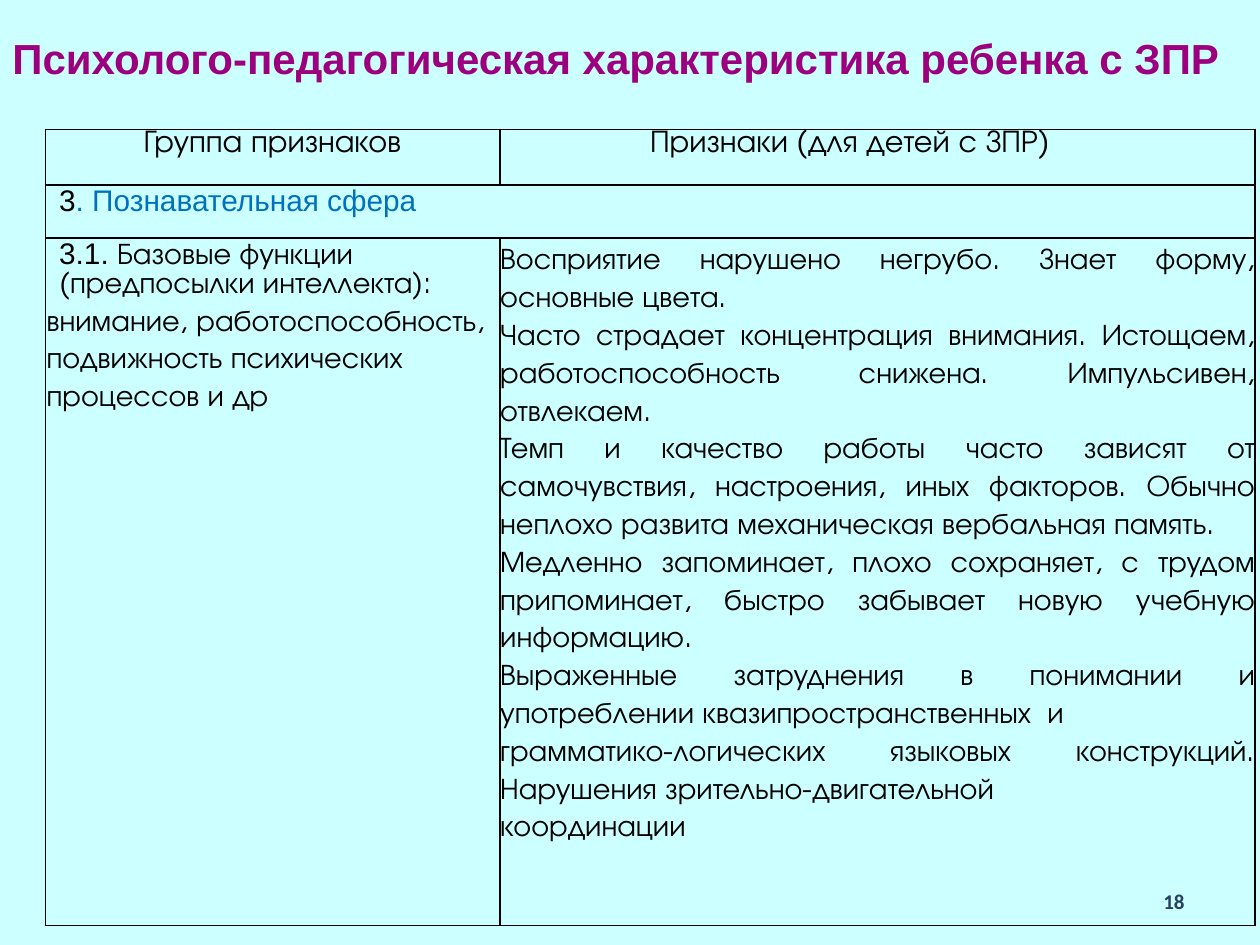
from lxml.etree import SubElement
from pptx import Presentation
from pptx.dml.color import RGBColor as RGB
from pptx.enum.text import MSO_ANCHOR as Anchor, PP_ALIGN as Align
from pptx.oxml.ns import qn
from pptx.util import Inches, Pt

AQUA = RGB(0xCC, 0xFF, 0xFF)
PURPLE = RGB(0x9C, 0x00, 0x7F)
NAVY = RGB(0x25, 0x40, 0x61)
BLUE = RGB(0x00, 0x70, 0xC0)
BLACK = RGB(0, 0, 0)
SANS, GEO, NUM = "Arial", "TeX Gyre Adventor", "Calibri"
W, H = Inches(10), Inches(7.5)


def add_run(p, text, font=GEO, size=17, color=BLACK, bold=False):
    r = p.add_run()
    r.text = text
    r.font.name, r.font.size, r.font.bold = font, Pt(size), bold
    r.font.color.rgb = color


def add_par(tf, text, align=Align.LEFT, indent=0, leading=None, **fmt):
    p = tf.paragraphs[0]
    if p.runs:
        p = tf.add_paragraph()
    p.alignment = align
    p._p.get_or_add_pPr().set("marL", str(Inches(indent)))
    if leading:
        p.line_spacing = Pt(leading)
    add_run(p, text, **fmt)
    return p


class Deck:
    def __init__(self):
        self.prs = Presentation()
        self.prs.slide_width, self.prs.slide_height = W, H

    def slide(self):
        self.s = self.prs.slides.add_slide(self.prs.slide_layouts[6])
        fill = self.s.background.fill
        fill.solid()
        fill.fore_color.rgb = AQUA

    def text(self, x, y, w, h, text, anchor=Anchor.TOP, wrap=True, **fmt):
        sp = self.s.shapes.add_textbox(int(x * W), int(y * H), int(w * W), int(h * H))
        tf = sp.text_frame
        tf.word_wrap, tf.vertical_anchor = wrap, anchor
        add_par(tf, text, **fmt)

    def table(self, x, y, cols, rows):
        frame = self.s.shapes.add_table(len(rows), len(cols), int(x * W), int(y * H),
                                        Inches(sum(cols)), Inches(sum(rows)))
        tbl = frame.table
        tbl.first_row = tbl.horz_banding = False
        for col, width in zip(tbl.columns, cols):
            col.width = Inches(width)
        for row, height in zip(tbl.rows, rows):
            row.height = Inches(height)
            for cell in row.cells:
                self.cell_style(cell)
        return tbl

    def cell_style(self, cell):
        cell.margin_left = cell.margin_right = cell.margin_top = cell.margin_bottom = 0
        cell.fill.background()
        tcPr = cell._tc.get_or_add_tcPr()
        for i, side in enumerate("LRTB"):
            ln = SubElement(tcPr, qn(f"a:ln{side}"), w=str(Pt(1)))
            fill = SubElement(ln, qn("a:solidFill"))
            SubElement(fill, qn("a:srgbClr"), val=str(BLACK))
            tcPr.insert(i, ln)


SIGNS = [
    "Восприятие нарушено негрубо. Знает форму, основные цвета.",
    "Часто страдает концентрация внимания. Истощаем, работоспособность снижена. "
    "Импульсивен, отвлекаем. ",
    "Темп и качество работы часто зависят от самочувствия, настроения, иных факторов. "
    "Обычно неплохо развита механическая вербальная память. ",
    "Медленно запоминает, плохо сохраняет, с трудом припоминает, быстро забывает "
    "новую учебную информацию. ",
    "Выраженные затруднения в понимании и употреблении квазипространственных  и ",
    "грамматико-логических языковых конструкций. Нарушения зрительно-двигательной",
    "координации",
]


def main():
    deck = Deck()
    deck.slide()
    deck.text(0.717, 0.927, 0.233, 0.053, "18", anchor=Anchor.MIDDLE, align=Align.RIGHT,
              font=NUM, size=12, color=NAVY, bold=True)
    deck.text(0, 0.028, 1.158, 0.067, "Психолого-педагогическая характеристика ребенка с ЗПР",
              align=Align.JUSTIFY, font=SANS, size=24, color=PURPLE, bold=True)

    tbl = deck.table(0.036, 0.137, [3.61, 5.99], [0.44, 0.42, 5.46])
    tbl.cell(1, 0).merge(tbl.cell(1, 1))
    add_par(tbl.cell(0, 0).text_frame, "Группа признаков", indent=0.78, size=18)
    add_par(tbl.cell(0, 1).text_frame, "Признаки (для детей с ЗПР)", indent=1.19, size=18)
    p = add_par(tbl.cell(1, 0).text_frame, "3", indent=0.11, font=SANS)
    add_run(p, ". Познавательная сфера", font=SANS, color=BLUE)

    tf = tbl.cell(2, 0).text_frame
    p = add_par(tf, "3.1. ", indent=0.11, font=SANS)
    add_run(p, "Базовые функции (предпосылки интеллекта):")
    add_par(tf, "внимание, работоспособность, подвижность психических процессов и др",
            indent=0.01, leading=21.6)
    for sign in SIGNS:
        add_par(tbl.cell(2, 1).text_frame, sign, align=Align.JUSTIFY, leading=21.6)
    deck.prs.save("out.pptx")


if __name__ == "__main__":
    main()
